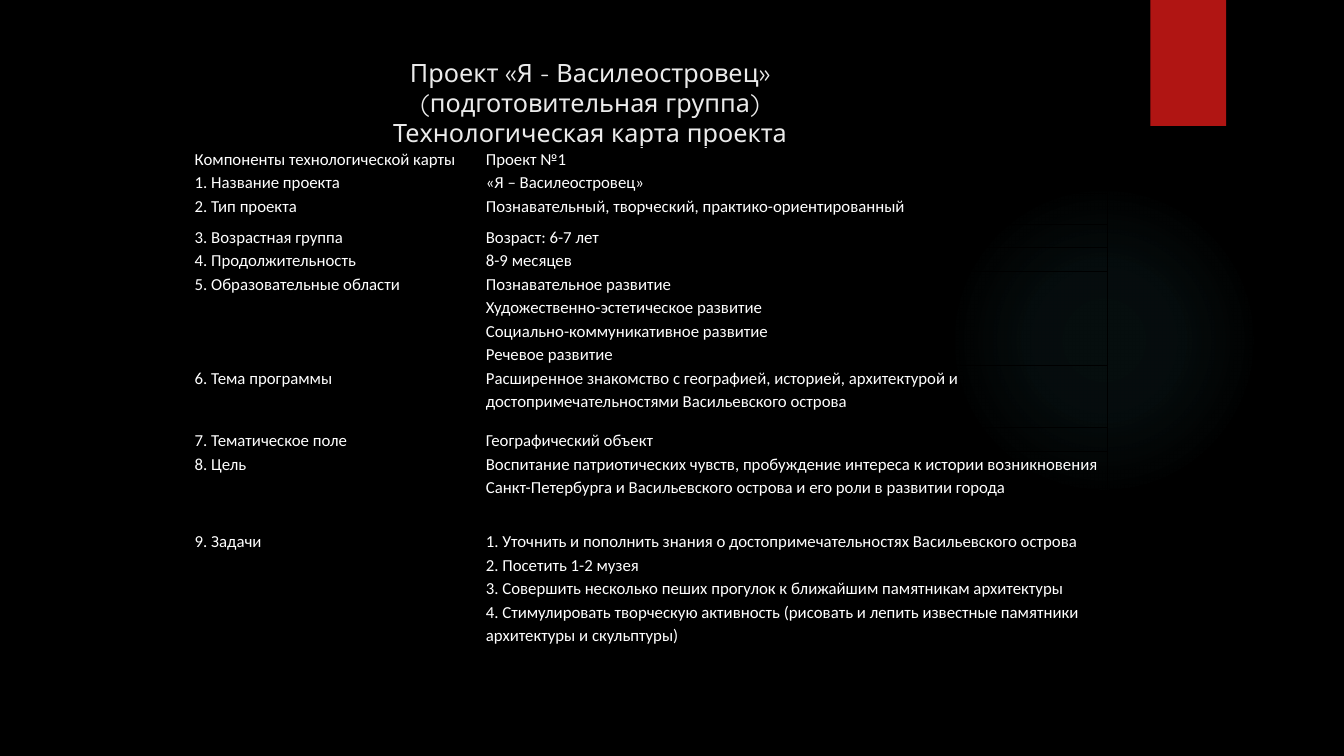
from dataclasses import dataclass

from pptx import Presentation
from pptx.dml.color import RGBColor as Rgb
from pptx.enum.shapes import MSO_SHAPE as Shape
from pptx.enum.text import MSO_ANCHOR as Anchor, PP_ALIGN as Align
from pptx.oxml import parse_xml
from pptx.oxml.ns import nsdecls
from pptx.util import Pt


@dataclass(frozen=True)
class Theme:
    back: str = "000000"
    glow: str = "50B9C1"
    tab: str = "B01513"
    title: str = "EBEBEB"
    text: str = "FFFFFF"
    head_font: str = "Quicksand"
    body_font: str = "Calibri"
    head_size: float = 18
    body_size: float = 12


THEME = Theme()

TITLE = [
    "Проект «Я - Василеостровец»",
    "(подготовительная группа)",
    "Технологическая карта проекта",
]

COLS = [208, 448.6]
LINE = 16.8

# Row height, label, paragraphs of the right-hand cell
ROWS = [
    (LINE, "Компоненты технологической карты", ["Проект №1"]),
    (LINE, "1. Название проекта", ["«Я – Василеостровец»"]),
    (22.3, "2. Тип проекта",
     ["Познавательный, творческий, практико-ориентированный"]),
    (LINE, "3. Возрастная группа", ["Возраст: 6-7 лет"]),
    (LINE, "4. Продолжительность", ["8-9 месяцев"]),
    (4 * LINE, "5. Образовательные области",
     ["Познавательное развитие",
      "Художественно-эстетическое развитие",
      "Социально-коммуникативное развитие",
      "Речевое развитие"]),
    (44.6, "6. Тема программы",
     ["Расширенное знакомство с географией, историей, архитектурой и "
      "достопримечательностями Васильевского острова"]),
    (LINE, "7. Тематическое поле", ["Географический объект"]),
    (55.4, "8. Цель",
     ["Воспитание патриотических чувств, пробуждение интереса к истории "
      "возникновения Санкт-Петербурга и Васильевского острова и его роли "
      "в развитии города"]),
    (122.4, "9. Задачи",
     ["1. Уточнить и пополнить знания о достопримечательностях "
      "Васильевского острова",
      "2. Посетить 1-2 музея",
      "3. Совершить несколько пеших прогулок к ближайшим памятникам "
      "архитектуры",
      "4. Стимулировать творческую активность (рисовать и лепить известные "
      "памятники архитектуры и скульптуры)"]),
]


def add_run(para, text, font, size, color):
    run = para.add_run()
    run.text = text
    run.font.name = font
    run.font.size = Pt(size)
    run.font.color.rgb = Rgb.from_string(color)


def add_form(slide, kind, left, top, width, height, color):
    form = slide.shapes.add_shape(
        kind, Pt(left), Pt(top), Pt(width), Pt(height))
    form.shadow.inherit = False
    form.line.fill.background()
    form.fill.solid()
    form.fill.fore_color.rgb = Rgb.from_string(color)
    return form


def add_glow(slide):
    form = add_form(slide, Shape.OVAL, 677.5, 131.8, 221.8, 221.8, THEME.glow)
    stops = "".join(
        f'<a:gs pos="{pos * 1000}"><a:srgbClr val="{THEME.glow}">'
        f'<a:alpha val="{alpha * 1000}"/></a:srgbClr></a:gs>'
        for pos, alpha in [(0, 7), (36, 6), (69, 0), (100, 0)])
    grad = parse_xml(
        f'<a:gradFill {nsdecls("a")}><a:gsLst>{stops}</a:gsLst>'
        '<a:path path="circle"><a:fillToRect l="50000" t="50000" '
        'r="50000" b="50000"/></a:path></a:gradFill>')
    props = form.element.spPr
    props.replace(props.find("{*}solidFill"), grad)


def add_title(slide):
    frame = slide.shapes.add_textbox(
        Pt(51), Pt(36), Pt(741), Pt(110)).text_frame
    frame.word_wrap = True
    frame.margin_top = Pt(5)
    para = frame.paragraphs[0]
    para.alignment = Align.CENTER
    para.line_spacing = Pt(21.4)
    for pos, line in enumerate(TITLE):
        if pos:
            para.add_line_break()
        add_run(para, line, THEME.head_font, THEME.head_size, THEME.title)


def fill_cell(cell, lines):
    cell.margin_left = cell.margin_right = Pt(4.5)
    cell.margin_top = cell.margin_bottom = 0
    cell.vertical_anchor = Anchor.TOP
    frame = cell.text_frame
    for pos, line in enumerate(lines):
        para = frame.add_paragraph() if pos else frame.paragraphs[0]
        para.line_spacing = 1.15
        add_run(para, line, THEME.body_font, THEME.body_size, THEME.text)
    # Borders come before the fill in the cell properties
    props = cell._tc.get_or_add_tcPr()
    for side in "LRTB":
        props.append(parse_xml(
            f'<a:ln{side} {nsdecls("a")} w="{Pt(1)}"><a:solidFill>'
            f'<a:srgbClr val="{THEME.back}"/></a:solidFill></a:ln{side}>'))
    cell.fill.background()


def add_card(slide):
    table = slide.shapes.add_table(
        len(ROWS), len(COLS), Pt(134.6), Pt(104.4), Pt(sum(COLS)),
        Pt(sum(row[0] for row in ROWS))).table
    table.first_row = table.horz_banding = False
    for col, width in zip(table.columns, COLS):
        col.width = Pt(width)
    for row, (height, label, lines) in zip(table.rows, ROWS):
        row.height = Pt(height)
        fill_cell(row.cells[0], [label])
        fill_cell(row.cells[1], lines)


def main():
    deck = Presentation()
    deck.slide_width, deck.slide_height = Pt(960), Pt(540)
    slide = deck.slides.add_slide(deck.slide_layouts[6])

    # Backdrop
    back = slide.background.fill
    back.solid()
    back.fore_color.rgb = Rgb.from_string(THEME.back)
    add_glow(slide)
    add_form(slide, Shape.RECTANGLE, 821.8, 0, 54, 90, THEME.tab)

    # Content
    add_title(slide)
    add_card(slide)
    deck.save("out.pptx")


if __name__ == "__main__":
    main()
